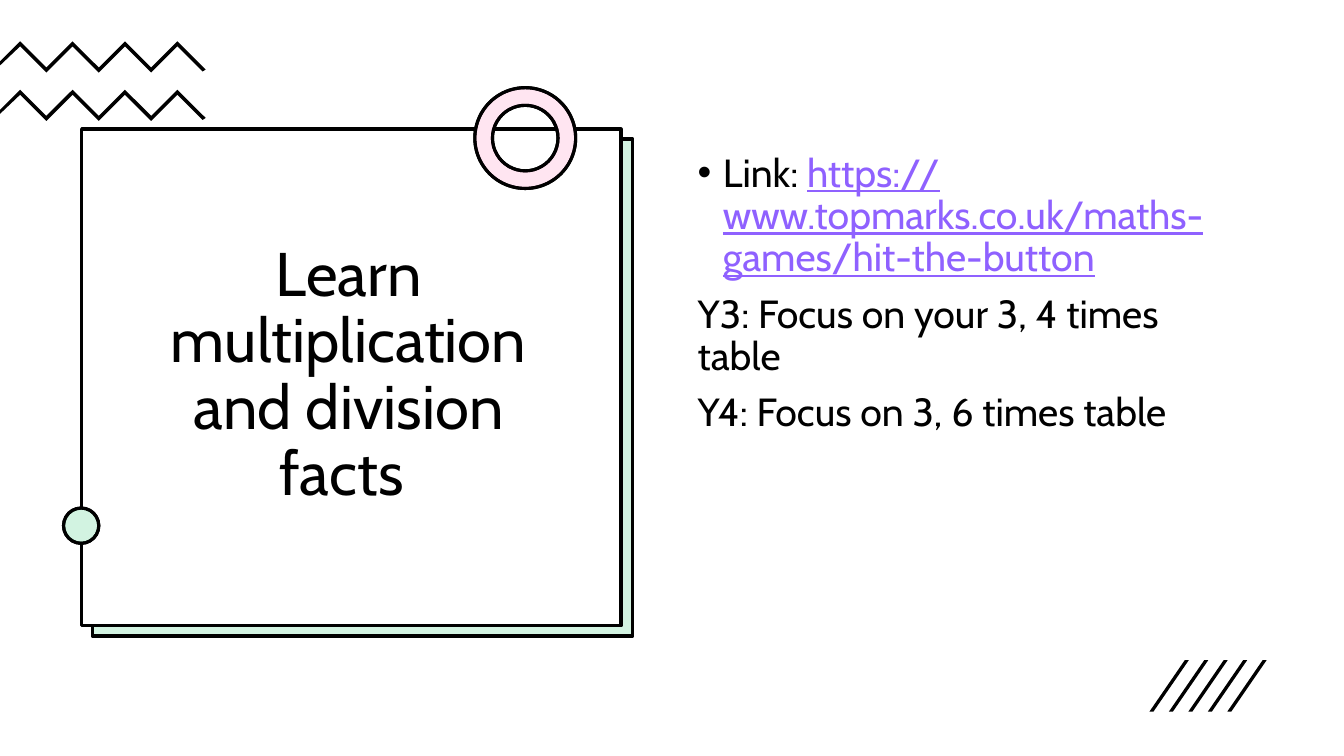
from pptx import Presentation
from pptx.dml.color import RGBColor
from pptx.enum.shapes import MSO_SHAPE as Preset
from pptx.enum.text import MSO_ANCHOR as Anchor, MSO_AUTO_SIZE as AutoSize, PP_ALIGN as Align
from pptx.oxml.ns import qn
from pptx.util import Inches, Pt
from lxml.etree import SubElement

BLACK = RGBColor(0x00, 0x00, 0x00)
WHITE = RGBColor(0xFF, 0xFF, 0xFF)
GREEN = RGBColor(0x21, 0xC4, 0x6B)
PINK = RGBColor(0xFF, 0x80, 0xBD)
LINK_PURPLE = RGBColor(0x8F, 0x61, 0xFF)
FONT = "Cabin"
ADDRESS_LINES = ("https://", "www.topmarks.co.uk/maths-", "games/hit-the-button")


def add_filled(slide, preset, box, fill):
    """Add a preset shape with a solid fill and no outline."""
    shape = slide.shapes.add_shape(preset, *[Inches(length) for length in box])
    shape.shadow.inherit = False
    shape.fill.solid()
    shape.fill.fore_color.rgb = fill
    shape.line.fill.background()
    return shape


def add_outlined(slide, preset, box, fill):
    """Add a filled preset shape with a black outline."""
    shape = add_filled(slide, preset, box, fill)
    shape.line.color.rgb = BLACK
    shape.line.width = Pt(2.25)
    if preset == Preset.DONUT:
        shape.adjustments[0] = 0.175
    return shape


def add_tinted(slide, preset, box, tint):
    """Add a white shape covered by the same shape in a 20% tint."""
    add_outlined(slide, preset, box, WHITE)
    cover = add_outlined(slide, preset, box, tint)
    colour = cover.fill._xPr.find(qn("a:solidFill")).find(qn("a:srgbClr"))
    SubElement(colour, qn("a:alpha"), val="20000")


def add_black_outline(group, points):
    """Add a closed black polygon, with points in inches, to a group."""
    corners = [(Inches(x), Inches(y)) for x, y in points]
    builder = group.shapes.build_freeform(*corners[0])
    builder.add_line_segments(corners[1:], close=True)
    polygon = builder.convert_to_shape()
    polygon.shadow.inherit = False
    polygon.fill.solid()
    polygon.fill.fore_color.rgb = BLACK
    polygon.line.fill.background()


def add_zigzags(slide):
    """Add the two zigzag bands at the top left."""
    group = slide.shapes.add_group_shape()
    for top in (0.41, 0.89):
        ridge = [(0.2 + 0.26 * i, top + 0.26 * (i % 2)) for i in range(7)]
        underside = [(x, y + 0.05) for x, y in reversed(ridge)]
        right_end = [(2.04, top + 0.28), (2.01, top + 0.3)]
        left_end = [(0, top + 0.24), (0, top + 0.2)]
        add_black_outline(group, ridge + right_end + underside + left_end)


def add_slashes(slide):
    """Add the five slanted strokes at the bottom right."""
    group = slide.shapes.add_group_shape()
    for i in range(5):
        left = 11.4 + 0.193 * i
        add_black_outline(group, [(left + 0.04, 7.06), (left, 7.06),
                                  (left + 0.35, 6.55), (left + 0.39, 6.55)])


def place_in_front(placeholder, box, anchor):
    """Bring a placeholder to the front, position it and return its text frame."""
    element = placeholder._element
    element.getparent().append(element)
    (placeholder.left, placeholder.top,
     placeholder.width, placeholder.height) = [Inches(length) for length in box]
    frame = placeholder.text_frame
    frame.word_wrap = True
    frame.auto_size = AutoSize.NONE
    frame.vertical_anchor = anchor
    return frame


def format_runs(paragraph, size):
    """Give a paragraph its line spacing and its runs the slide font."""
    paragraph.line_spacing = 0.9
    for run in paragraph.runs:
        run.font.name = FONT
        run.font.size = Pt(size)
        run.font.color.rgb = BLACK
    for line_break in paragraph._p.findall(qn("a:br")):
        SubElement(line_break, qn("a:rPr"), sz=str(size * 100))


def set_bullet(paragraph, bulleted):
    """Give a paragraph a hanging bullet, or none at all."""
    properties = paragraph._p.get_or_add_pPr()
    hang = Inches(0.25) if bulleted else 0
    properties.set("marL", str(hang))
    properties.set("indent", str(-hang))
    if bulleted:
        SubElement(properties, qn("a:buFont"), typeface="Arial")
        SubElement(properties, qn("a:buChar"), char="•")
    else:
        SubElement(properties, qn("a:buNone"))


def fill_title(title):
    """Write the title on the card."""
    frame = place_in_front(title, (1.21, 1.38, 4.5, 4.7), Anchor.MIDDLE)
    frame.text = "Learn multiplication and division facts "
    heading = frame.paragraphs[0]
    heading.alignment = Align.CENTER
    format_runs(heading, 44)


def fill_body(body):
    """Write the practice link and the focus for each year."""
    frame = place_in_front(body, (6.82, 1.47, 5.71, 4.76), Anchor.TOP)
    frame.margin_right = Inches(0.3)
    frame.text = ("Link: \nY3: Focus on your 3, 4 times table\n"
                  "Y4: Focus on 3, 6 times table")
    practice = frame.paragraphs[0]
    for i, address_line in enumerate(ADDRESS_LINES):
        if i:
            practice.add_line_break()
        practice.add_run().text = address_line
    for i, paragraph in enumerate(frame.paragraphs):
        set_bullet(paragraph, i == 0)
        paragraph.space_before = Pt(10 if i else 0)
        format_runs(paragraph, 28)
    for address_run in practice.runs[1:]:
        address_run.font.color.rgb = LINK_PURPLE
        address_run.font.underline = True


def main():
    """Build the times table slide and save it."""
    deck = Presentation()
    deck.slide_width, deck.slide_height = Inches(13.33), Inches(7.5)
    slide = deck.slides.add_slide(deck.slide_layouts[1])

    add_filled(slide, Preset.RECTANGLE, (0, 0, 13.33, 7.5), WHITE)
    add_zigzags(slide)
    add_tinted(slide, Preset.RECTANGLE, (0.92, 1.38, 5.35, 4.93), GREEN)
    add_outlined(slide, Preset.RECTANGLE, (0.81, 1.28, 5.35, 4.93), WHITE)
    fill_title(slide.shapes.title)
    add_tinted(slide, Preset.DONUT, (4.71, 0.87, 1, 1), PINK)
    add_tinted(slide, Preset.OVAL, (0.63, 5.04, 0.35, 0.35), GREEN)
    fill_body(slide.placeholders[1])
    add_slashes(slide)
    deck.save("out.pptx")


if __name__ == "__main__":
    main()
